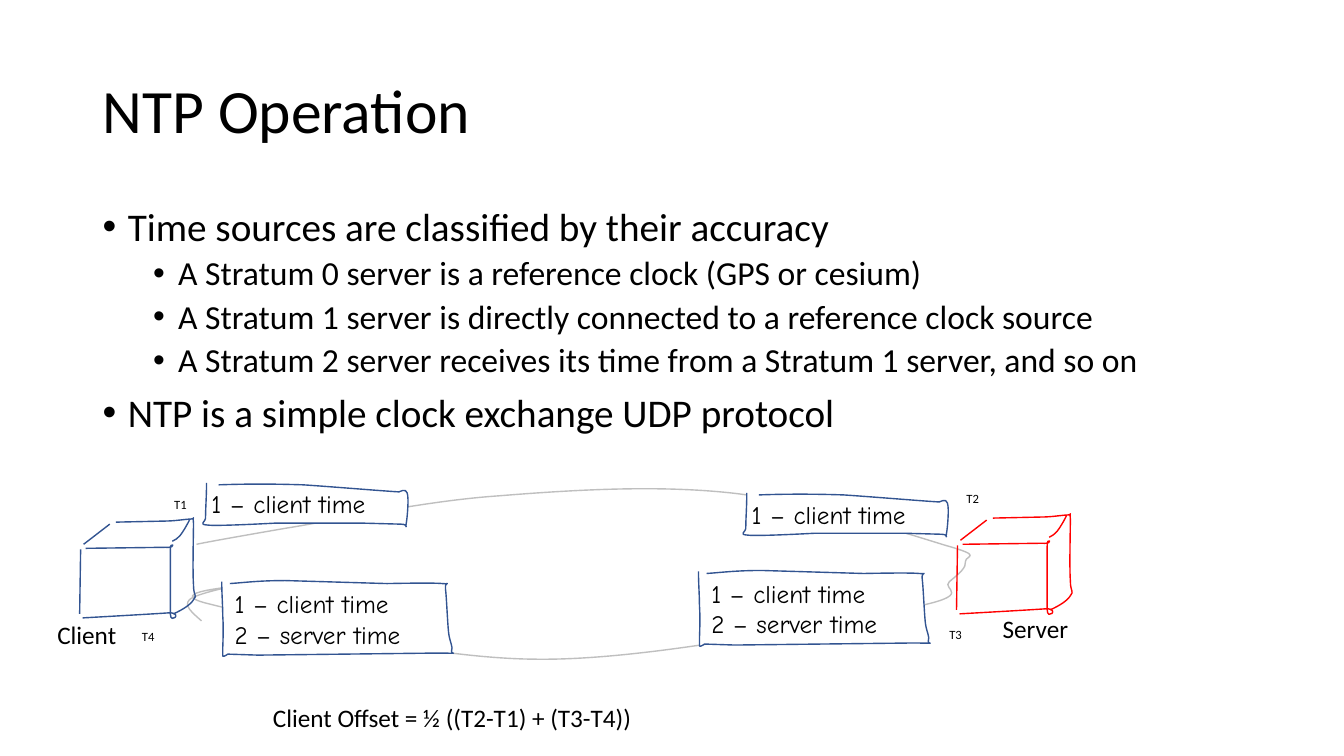
"""Build the NTP Operation slide: stratum bullets above a client/server time exchange sketch."""
from lxml.etree import SubElement
from pptx import Presentation
from pptx.dml.color import RGBColor as RGB
from pptx.enum.text import MSO_ANCHOR as Anchor, MSO_AUTO_SIZE as Fit
from pptx.oxml.ns import qn
from pptx.util import Cm, Pt

TITLE = "NTP Operation"
BULLETS = [
    (0, "Time sources are classified by their accuracy"),
    (1, "A Stratum 0 server is a reference clock (GPS or cesium)"),
    (1, "A Stratum 1 server is directly connected to a reference clock source"),
    (1, "A Stratum 2 server receives its time from a Stratum 1 server, and so on"),
    (0, "NTP is a simple clock exchange UDP protocol"),
]
REQUEST = ["1 – client time"]
REPLY = REQUEST + ["2 – server time"]
LABELS = [
    ("Client", "label", (0.47, 6.09, 0.79, 0.4)),
    ("Server", "label", (9.85, 6.04, 0.86, 0.4)),
    ("Client Offset = ½ ((T2-T1) + (T3-T4))", "label", (2.61, 6.92, 3.81, 0.4)),
    ("T1", "stamp", (1.63, 4.88, 0.33, 0.25)),
    ("T2", "stamp", (9.49, 4.82, 0.33, 0.25)),
    ("T3", "stamp", (9.32, 6.17, 0.33, 0.25)),
    ("T4", "stamp", (1.31, 6.19, 0.33, 0.25)),
]

THEME = {
    "client": RGB.from_string("325491"),
    "server": RGB.from_string("FF0000"),
    "route": RGB.from_string("BFBFBF"),
    "paper": RGB.from_string("FFFFFF"),
    "title": {"size": Pt(44), "name": "Calibri"},
    "bullet": {"size": Pt(28), "name": "Calibri"},
    "subbullet": {"size": Pt(24), "name": "Calibri"},
    "label": {"size": Pt(18), "name": "Calibri"},
    "stamp": {"size": Pt(9), "name": "Calibri"},
    "packet": {"size": Pt(18), "name": "Comic Neue"},
    "ink": RGB.from_string("000000"),
}
LEVELS = [("bullet", 0.25, 10), ("subbullet", 0.75, 5)]

# A stroke is a start point, then line ends (2 numbers) or Bézier curves (6 numbers).
ROUTE = [
    (1.95, 5.4), (2.14, 5.36, 2.84, 5.24, 2.84, 5.24),
    (3.34, 5.16, 4.21, 4.97, 4.94, 4.92), (5.68, 4.86, 6.51, 4.81, 7.25, 4.89),
    (7.99, 4.97, 8.99, 5.29, 9.38, 5.41), (9.77, 5.52, 9.58, 5.51, 9.58, 5.57),
    (9.59, 5.63, 9.52, 5.69, 9.42, 5.77), (9.33, 5.85, 9.7, 5.9, 9.03, 6.03),
    (8.35, 6.15, 6.51, 6.55, 5.35, 6.54), (4.19, 6.54, 2.56, 6.11, 2.07, 5.99),
    (1.57, 5.87, 2.4, 5.82, 2.36, 5.81), (2.33, 5.81, 1.94, 5.89, 1.88, 5.95),
    (1.82, 6.01, 1.91, 6.08, 2, 6.16),
]
CUBE = [
    [(0.8, 5.45), (0.79, 6.09)],
    [(0.85, 5.44), (1.64, 5.43), (1.78, 5.44, 1.68, 5.35, 1.69, 5.46),
     (1.69, 5.57, 1.69, 5.99, 1.69, 6.09), (1.69, 6.2, 1.82, 6.08, 1.68, 6.08),
     (1.53, 6.09, 1.18, 6.11, 0.82, 6.13)],
    [(0.83, 5.4), (1.09, 5.2)],
    [(1.15, 5.18), (1.62, 5.17), (1.74, 5.17, 1.84, 5.15, 1.89, 5.15),
     (1.94, 5.16, 1.91, 5.09, 1.92, 5.19), (1.92, 5.3, 1.91, 5.67, 1.92, 5.8),
     (1.92, 5.92, 1.96, 5.9, 1.92, 5.95), (1.89, 6, 1.81, 6.05, 1.72, 6.09)],
    [(1.71, 5.37), (1.74, 5.36, 1.76, 5.34, 1.79, 5.31),
     (1.82, 5.27, 1.85, 5.22, 1.88, 5.16)],
]
SHORT_BOX = [
    (2.05, 4.79), (2.05, 4.92, 2.04, 5.05, 2.04, 5.12),
    (2.05, 5.19, 1.95, 5.2, 2.07, 5.21), (2.18, 5.22, 2.73, 5.19, 2.73, 5.19),
    (3.6, 5.19), (3.98, 5.2), (4.06, 5.2, 4.02, 5.26, 4.03, 5.2),
    (4.04, 5.15, 4.06, 4.94, 4.04, 4.89), (4.03, 4.84, 3.96, 4.88, 3.96, 4.88),
    (3.79, 4.87, 3.31, 4.83, 3.01, 4.81), (2.71, 4.8, 2.44, 4.8, 2.17, 4.81),
]
TALL_BOX = [
    (2.2, 5.77), (2.2, 5.89, 2.21, 6, 2.21, 6.11), (2.22, 6.22, 2.21, 6.43, 2.21, 6.43),
    (2.21, 6.5, 2.21, 6.5, 2.21, 6.51), (2.22, 6.52, 2.26, 6.49, 2.26, 6.49),
    (2.56, 6.5), (4.3, 6.48), (4.62, 6.48, 4.45, 6.49, 4.48, 6.46),
    (4.5, 6.42, 4.46, 6.37, 4.45, 6.27), (4.44, 6.17, 4.43, 5.92, 4.42, 5.84),
    (4.41, 5.76, 4.49, 5.8, 4.39, 5.79), (4.3, 5.78, 3.84, 5.79, 3.84, 5.79),
    (2.83, 5.76), (2.57, 5.76, 2.43, 5.78, 2.28, 5.79),
]
CUBES = [("client", (0, 0)), ("server", (8.7, -0.04))]
PACKETS = [
    (SHORT_BOX, REQUEST, (2, 4.8, 2.1, 0.4), [(0, 0), (5.36, 0.1)]),
    (TALL_BOX, REPLY, (2.23, 5.79, 2.4, 0.71), [(0, 0), (4.73, -0.1)]),
]
STEPS = 12


def inch(v):
    return Cm(v * 2.54)


def pairs(seg):
    return list(zip(seg[::2], seg[1::2]))


def trace(stroke):
    points = [stroke[0]]
    for seg in stroke[1:]:
        if len(seg) == 2:
            points.append(seg)
            continue
        ctrl = [points[-1], *pairs(seg)]
        for i in range(1, STEPS + 1):
            t = i / STEPS
            weights = ((1 - t) ** 3, 3 * t * (1 - t) ** 2, 3 * t * t * (1 - t), t ** 3)
            points.append(tuple(sum(w * c[k] for w, c in zip(weights, ctrl)) for k in (0, 1)))
    return points


def draw(s, stroke, color, shift=(0, 0), filled=False):
    dx, dy = shift
    points = [(inch(x + dx), inch(y + dy)) for x, y in trace(stroke)]
    builder = s.shapes.build_freeform(*points[0])
    builder.add_line_segments(points[1:], close=False)
    sp = builder.convert_to_shape()
    outline = next(sp._element.iter(qn("a:path")))
    for old in list(outline):
        outline.remove(old)
    for i, seg in enumerate(stroke):
        tag = "a:cubicBezTo" if len(seg) == 6 else "a:lnTo" if i else "a:moveTo"
        step = SubElement(outline, qn(tag))
        for x, y in pairs(seg):
            pt = SubElement(step, qn("a:pt"))
            pt.set("x", str(inch(x + dx) - sp.left))
            pt.set("y", str(inch(y + dy) - sp.top))
    sp.shadow.inherit = False
    sp.line.color.rgb = THEME[color]
    sp.line.width = Pt(1)
    if filled:
        sp.fill.solid()
        sp.fill.fore_color.rgb = THEME["paper"]
    else:
        sp.fill.background()


def write(p, text, style):
    r = p.add_run()
    r.text = text
    for key, value in THEME[style].items():
        setattr(r.font, key, value)
    r.font.color.rgb = THEME["ink"]


def add_text(s, lines, style, box, **frame):
    tf = s.shapes.add_textbox(*map(inch, box)).text_frame
    for key, value in ({"word_wrap": False, "auto_size": Fit.SHAPE_TO_FIT_TEXT} | frame).items():
        setattr(tf, key, value)
    for i, line in enumerate(lines):
        write(tf.add_paragraph() if i else tf.paragraphs[0], line, style)
    return tf


def add_bullets(s, box):
    tf = add_text(s, [], "bullet", box, word_wrap=True, auto_size=Fit.NONE)
    for i, (level, text) in enumerate(BULLETS):
        style, indent, before = LEVELS[level]
        p = tf.add_paragraph() if i else tf.paragraphs[0]
        for key, value in {"level": level, "line_spacing": 0.9, "space_before": Pt(before)}.items():
            setattr(p, key, value)
        pPr = p._p.get_or_add_pPr()
        pPr.set("marL", str(inch(indent)))
        pPr.set("indent", str(inch(-0.25)))
        SubElement(pPr, qn("a:buFont")).set("typeface", "Arial")
        SubElement(pPr, qn("a:buChar")).set("char", "•")
        write(p, text, style)


def main():
    prs = Presentation()
    prs.slide_width, prs.slide_height = Cm(33.87), Cm(19.05)
    s = prs.slides.add_slide(prs.slide_layouts[6])
    draw(s, ROUTE, "route")
    tf = add_text(s, [TITLE], "title", (0.92, 0.4, 11.5, 1.45), word_wrap=True,
                  auto_size=Fit.NONE, vertical_anchor=Anchor.MIDDLE)
    tf.paragraphs[0].line_spacing = 0.9
    add_bullets(s, (0.92, 2.01, 11.5, 4.76))
    for color, shift in CUBES:
        for stroke in CUBE:
            draw(s, stroke, color, shift)
    for outline, lines, (x, y, w, h), shifts in PACKETS:
        for dx, dy in shifts:
            draw(s, outline, "client", (dx, dy), filled=True)
            add_text(s, lines, "packet", (x + dx, y + dy, w, h))
    for text, style, box in LABELS:
        add_text(s, [text], style, box)
    prs.save("out.pptx")


if __name__ == "__main__":
    main()
